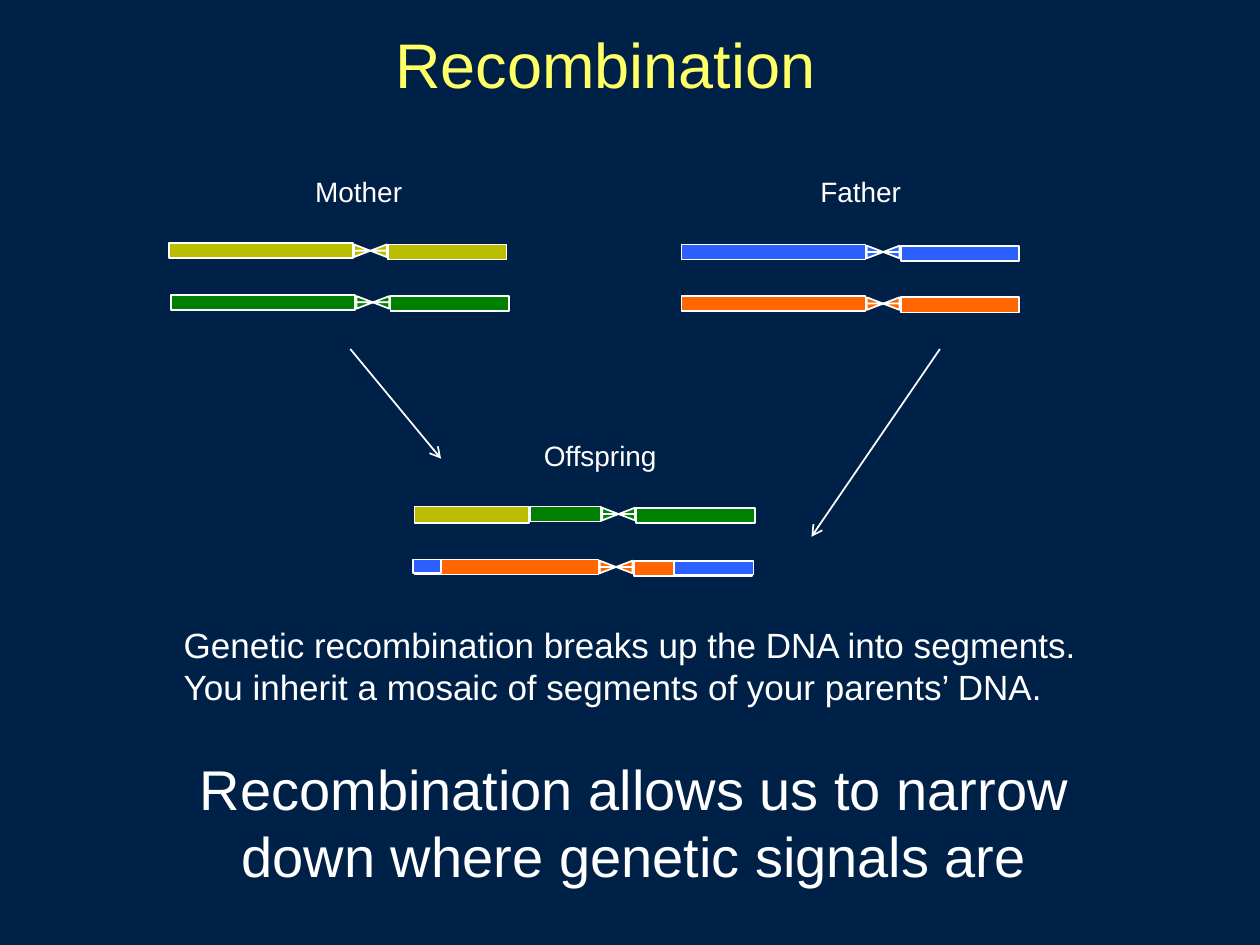
from pptx import Presentation
from pptx.dml.color import RGBColor
from pptx.enum.shapes import MSO_CONNECTOR, MSO_SHAPE
from pptx.enum.text import MSO_ANCHOR, MSO_AUTO_SIZE, PP_ALIGN
from pptx.oxml.ns import qn
from pptx.util import Inches, Pt
from lxml import etree

RECT = MSO_SHAPE.RECTANGLE
WEDGE = MSO_SHAPE.RIGHT_TRIANGLE
STRAIGHT = MSO_CONNECTOR.STRAIGHT
BOTTOM = MSO_ANCHOR.BOTTOM
GROW = MSO_AUTO_SIZE.SHAPE_TO_FIT_TEXT
LEFT, CENTER, RIGHT = PP_ALIGN.LEFT, PP_ALIGN.CENTER, PP_ALIGN.RIGHT

NAVY, WHITE, YELLOW = "002147", "FFFFFF", "FFFF66"
BLUE, ORANGE, OLIVE, GREEN = "2C60FF", "FF6600", "BBBE00", "008000"


def color(code):
    return RGBColor.from_string(code)


class Deck:
    """Holds the style and the current slide, and draws each kind of element."""

    font = "Arial"
    thick = 0.12
    wedge = 0.13
    half = 0.05

    def __init__(self):
        self.show = Presentation()
        self.show.slide_width = Inches(10)
        self.show.slide_height = Inches(7.5)
        self.slide = self.show.slides.add_slide(self.show.slide_layouts[5])
        fill = self.slide.background.fill
        fill.solid()
        fill.fore_color.rgb = color(NAVY)

    def label(self, frame, text, size, align, tint=WHITE):
        frame.text = text
        for para in frame.paragraphs:
            para.alignment = align
            for run in para.runs:
                run.font.name = self.font
                run.font.size = Pt(size)
                run.font.color.rgb = color(tint)

    def title(self, text, x, y, w, h):
        box = self.slide.shapes.title
        box.left, box.top, box.width, box.height = map(Inches, (x, y, w, h))
        box.text_frame.vertical_anchor = BOTTOM
        self.label(box.text_frame, text, 36, CENTER, YELLOW)

    def text(self, text, x, y, w, h, size, align, wrap=False):
        box = self.slide.shapes.add_textbox(*map(Inches, (x, y, w, h)))
        frame = box.text_frame
        frame.word_wrap = wrap
        frame.auto_size = GROW
        self.label(frame, text, size, align)

    def shape(self, home, kind, x, y, w, h, tint, flips=()):
        part = home.add_shape(kind, *map(Inches, (x, y, w, h)))
        part.shadow.inherit = False
        part.fill.solid()
        part.fill.fore_color.rgb = color(tint)
        part.line.color.rgb = color(WHITE)
        part.line.width = Pt(1)
        for flip in flips:
            part.element.spPr.get_or_add_xfrm().set(flip, "1")

    def block(self, x, y, w, h, tint):
        self.shape(self.slide.shapes, RECT, x, y, w, h, tint)

    def strand(self, x, y, tint, arm=1.46):
        home = self.slide.shapes.add_group_shape().shapes
        mid = x + arm + 0.01
        self.shape(home, RECT, x, y, arm, self.thick, tint)
        for col, across in enumerate(((), ("flipH",))):
            for row, down in enumerate(((), ("flipV",))):
                self.shape(home, WEDGE, mid + col * self.wedge,
                           y + 0.01 + row * self.half,
                           self.wedge, self.half, tint, across + down)
        self.shape(home, RECT, mid + 0.27, y + 0.01, 0.94, self.thick, tint)

    def arrow(self, *ends):
        link = self.slide.shapes.add_connector(STRAIGHT, *map(Inches, ends))
        link.line.color.rgb = color(WHITE)
        link.line.width = Pt(1)
        props = link.element.spPr
        tip = etree.SubElement(props.find(qn("a:ln")), qn("a:tailEnd"))
        tip.set("type", "arrow")
        etree.SubElement(props, qn("a:effectLst"))


def main():
    deck = Deck()
    deck.title("Recombination", 0.99, 0.13, 7.63, 0.72)

    for name, x, y, w in (("Mother", 2.39, 1.34, 0.9),
                          ("Father", 6.4, 1.34, 0.85),
                          ("Offspring", 4.2, 3.43, 1.11)):
        deck.text(name, x, y, w, 0.37, 16, RIGHT)

    for x, y, tint in ((5.41, 1.94, BLUE), (5.41, 2.35, ORANGE),
                       (1.34, 1.93, OLIVE), (1.36, 2.34, GREEN),
                       (3.29, 4.44, ORANGE)):
        deck.strand(x, y, tint)
    deck.block(3.29, 4.02, 0.91, 0.13, OLIVE)
    deck.strand(4.21, 4.02, GREEN, 0.56)
    deck.block(5.35, 4.45, 0.63, 0.11, BLUE)
    deck.block(3.28, 4.44, 0.22, 0.11, BLUE)

    deck.arrow(2.78, 2.77, 3.5, 3.64)
    deck.arrow(7.46, 2.77, 6.44, 4.26)

    deck.text("Genetic recombination breaks up the DNA into segments.\n"
              "You inherit a mosaic of segments of your parents’ DNA.",
              1.36, 4.9, 7.34, 0.77, 20, LEFT)
    deck.text("Recombination allows us to narrow down where genetic signals are",
              1.1, 5.94, 7.87, 1.18, 32, CENTER, True)
    deck.show.save("out.pptx")


if __name__ == "__main__":
    main()
